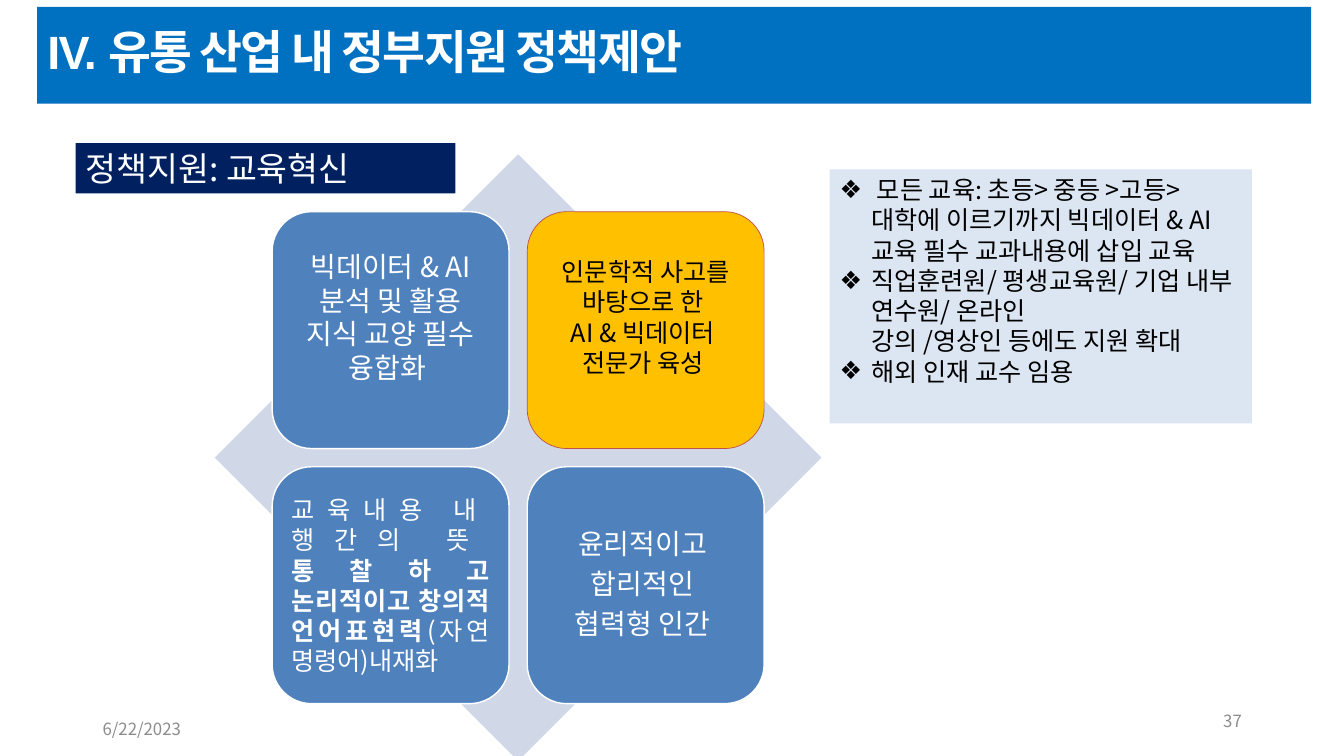
from dataclasses import dataclass

from lxml import etree
from pptx import Presentation
from pptx import util as u
from pptx.dml.color import RGBColor
from pptx.enum import shapes, text
from pptx.oxml.ns import qn

# Content: a paragraph is a list of (text, bold) runs, "\v" breaks a line
TITLE = "IV. 유통 산업 내 정부지원 정책제안"
LABEL = "정책지원: 교육혁신"
MEASURES = [
    " 모든 교육: 초등> 중등 >고등> 대학에 이르기까지 빅데이터 & AI 교육 필수 교과내용에 삽입 교육",
    "직업훈련원/ 평생교육원/ 기업 내부 연수원/ 온라인\v강의 /영상인 등에도 지원 확대",
    "해외 인재 교수 임용",
]
DATE, PAGE = "6/22/2023", "37"


@dataclass
class Theme:
    korean: str = "Noto Sans CJK KR"
    latin_title: str = "Arial"
    white: str = "FFFFFF"
    black: str = "000000"
    gray: str = "8C8C8C"
    banner: str = "0070C0"
    navy: str = "002060"
    panel: str = "DCE6F2"
    diamond: str = "D0D8E8"
    blue: str = "4F81BD"
    gold: str = "FFC000"
    red: str = "C0504D"
    title: float = 33.3
    label: float = 24
    large: float = 20
    body: float = 18
    small: float = 12


theme = Theme()
ALIGN = text.PP_ALIGN
LINE_FACTOR = 1.2

# Cards in reading order
CARDS = [
    dict(paragraphs=[[("빅데이터 & AI 분석 및 활용 지식 교양 필수 융합화 ", False)]],
         size=theme.large, raised=19),
    dict(paragraphs=[[("인문학적 사고를 바탕으로 한 ", False)],
                     [("AI & 빅데이터 ", False)], [("전문가 육성 ", False)]],
         size=theme.body, raised=19, fill=theme.gold, line=theme.red,
         weight=0.5, color=theme.black),
    dict(paragraphs=[[("교육내용 내\v행간의 뜻\v", False),
                      ("통찰하고 논리적이고 창의적 언어표현력", True),
                      ("(자연 명령어)내재화 ", False)]],
         size=theme.body, align=ALIGN.JUSTIFY),
    dict(paragraphs=[[("윤리적이고 ", False)], [("합리적인 ", False)],
                     [("협력형 인간 ", False)]],
         size=theme.large, spacing=0.9, after=7),
]

# Layout in points
BANNER = (26.6, 5, 910, 69.1)
LABEL_BOX = (54, 102.2, 271.4, 36)
PANEL = (592.6, 121, 301.7, 181.4)
DIAMOND = (153.4, 110.2, 433.4, 433.4)
DATE_BOX = (66.2, 511.2, 138.2, 18)
PAGE_BOX = (678.2, 500.4, 216, 28.8)
CARD_SIZE, CARD_GAP = 169.2, 13
HANGING = 22.5


def place(shape, box):
    shape.left, shape.top, shape.width, shape.height = (u.Pt(v) for v in box)


def paint(shape, fill, line=None, weight=1):
    shape.fill.solid()
    shape.fill.fore_color.rgb = RGBColor.from_string(fill)
    if line:
        shape.line.color.rgb = RGBColor.from_string(line)
        shape.line.width = u.Pt(weight)
    else:
        shape.line.fill.background()


def add_block(slide, kind, box, fill, line=None, weight=1):
    shape = slide.shapes.add_shape(kind, *(u.Pt(v) for v in box))
    shape.shadow.inherit = False
    paint(shape, fill, line, weight)
    return shape


def set_frame(shape, anchor, insets=(7.2, 3.6, 7.2, 3.6)):
    frame = shape.text_frame
    frame.word_wrap = True
    frame.auto_size = text.MSO_AUTO_SIZE.NONE
    frame.vertical_anchor = anchor
    (frame.margin_left, frame.margin_top,
     frame.margin_right, frame.margin_bottom) = (u.Pt(v) for v in insets)
    return frame


def style_run(run, size, color, bold=False, latin=theme.korean):
    run.font.size = u.Pt(size)
    run.font.bold = bold
    run.font.color.rgb = RGBColor.from_string(color)
    run.font.name = latin
    east_asian = etree.SubElement(run.font._element, qn("a:ea"))
    east_asian.set("typeface", theme.korean)


def write(frame, paragraphs, size, color, align=ALIGN.LEFT, spacing=1, after=0):
    frame.text = "\n".join("" for _ in paragraphs)
    for paragraph, runs in zip(frame.paragraphs, paragraphs):
        paragraph.alignment = align
        paragraph.line_spacing = u.Pt(size * LINE_FACTOR * spacing)
        paragraph.space_before = u.Pt(0)
        paragraph.space_after = u.Pt(after)
        for words, bold in runs:
            for index, part in enumerate(words.split("\v")):
                if index:
                    paragraph.add_line_break()
                if part:
                    run = paragraph.add_run()
                    run.text = part
                    style_run(run, size, color, bold)


def add_bullet(paragraph):
    properties = paragraph._p.get_or_add_pPr()
    properties.set("marL", str(u.Pt(HANGING)))
    properties.set("indent", str(-u.Pt(HANGING)))
    etree.SubElement(properties, qn("a:buChar")).set("char", "❖")


def build_title(slide):
    title = slide.shapes.title
    place(title, BANNER)
    paint(title, theme.banner)
    frame = set_frame(title, text.MSO_ANCHOR.MIDDLE, (7.2, 0, 7.2, 7))
    frame.text = TITLE
    frame.paragraphs[0].alignment = ALIGN.LEFT
    for run in frame.paragraphs[0].runs:
        style_run(run, theme.title, theme.white, True, theme.latin_title)
        run.font._element.set("spc", "-120")


def build_measures(slide):
    panel = slide.placeholders[1]
    place(panel, PANEL)
    paint(panel, theme.panel)
    frame = set_frame(panel, text.MSO_ANCHOR.TOP)
    frame.text = "\n".join(MEASURES)
    for paragraph in frame.paragraphs:
        paragraph.line_spacing = u.Pt(theme.body * LINE_FACTOR)
        paragraph.space_before = u.Pt(0)
        add_bullet(paragraph)
        for run in paragraph.runs:
            style_run(run, theme.body, theme.black)


def build_cards(slide):
    add_block(slide, shapes.MSO_SHAPE.DIAMOND, DIAMOND, theme.diamond)
    offset = (DIAMOND[2] - 2 * CARD_SIZE - CARD_GAP) / 2
    for index, card in enumerate(CARDS):
        row, column = divmod(index, 2)
        left = DIAMOND[0] + offset + column * (CARD_SIZE + CARD_GAP)
        top = DIAMOND[1] + offset + row * (CARD_SIZE + CARD_GAP)
        shape = add_block(slide, shapes.MSO_SHAPE.ROUNDED_RECTANGLE,
                          (left, top, CARD_SIZE, CARD_SIZE),
                          card.get("fill", theme.blue),
                          card.get("line", theme.white), card.get("weight", 1))
        frame = set_frame(shape, text.MSO_ANCHOR.MIDDLE,
                          (5.4, 5.4, 5.4, 5.4 + card.get("raised", 0)))
        write(frame, card["paragraphs"], card["size"],
              card.get("color", theme.white), card.get("align", ALIGN.CENTER),
              card.get("spacing", 1), card.get("after", 0))


def build_label_and_footer(slide):
    label = add_block(slide, shapes.MSO_SHAPE.RECTANGLE, LABEL_BOX, theme.navy)
    write(set_frame(label, text.MSO_ANCHOR.MIDDLE), [[(LABEL, False)]],
          theme.label, theme.white)
    for words, box, align in ((DATE, DATE_BOX, ALIGN.LEFT),
                              (PAGE, PAGE_BOX, ALIGN.RIGHT)):
        footer = slide.shapes.add_textbox(*(u.Pt(v) for v in box))
        write(set_frame(footer, text.MSO_ANCHOR.MIDDLE), [[(words, False)]],
              theme.small, theme.gray, align)


def main():
    presentation = Presentation()
    presentation.slide_width, presentation.slide_height = u.Pt(960), u.Pt(540)
    slide = presentation.slides.add_slide(presentation.slide_layouts[1])
    build_title(slide)
    build_measures(slide)
    build_cards(slide)
    build_label_and_footer(slide)
    presentation.save("out.pptx")


if __name__ == "__main__":
    main()
